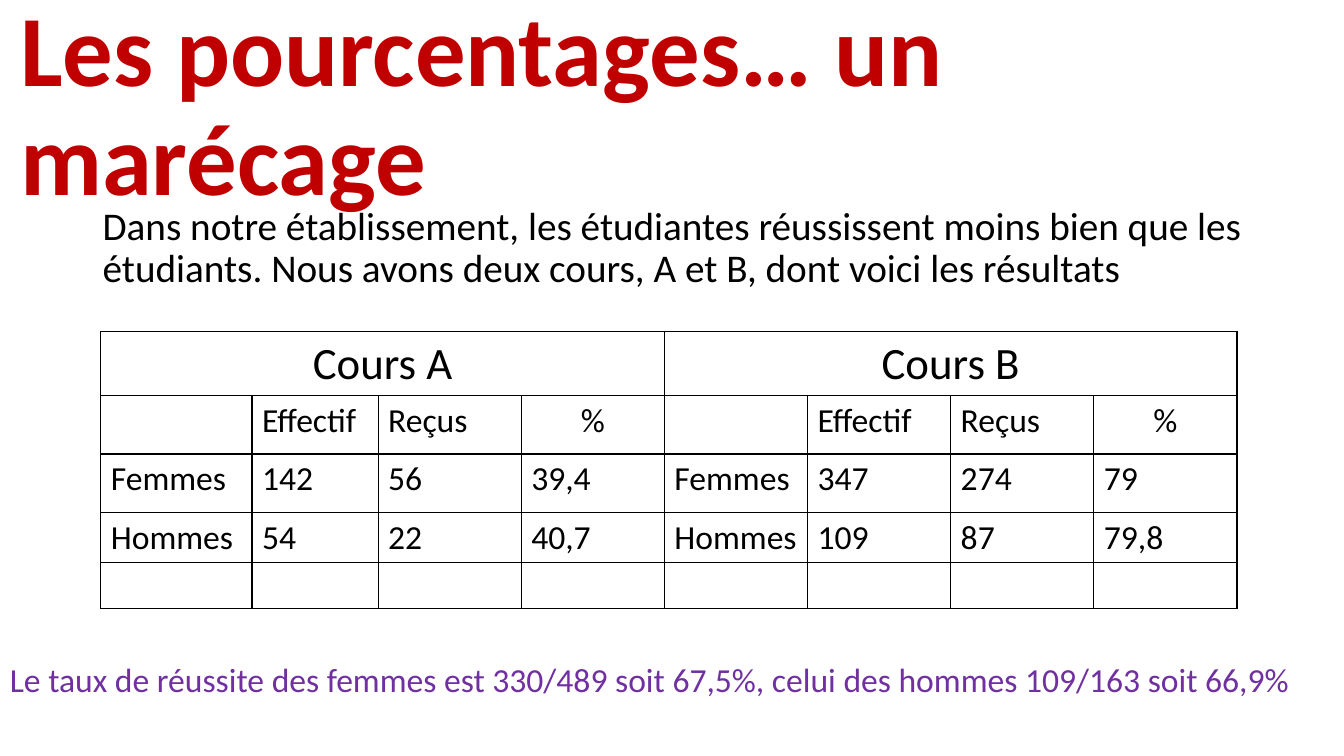
from dataclasses import dataclass

from lxml.etree import SubElement
from pptx import Presentation
from pptx.dml.color import RGBColor
from pptx.enum.text import MSO_ANCHOR as ANCHOR, MSO_AUTO_SIZE as AUTO, PP_ALIGN as ALIGN
from pptx.oxml.ns import qn
from pptx.util import Pt

EMU_PER_PX = 9144  # 100 px to the inch
FONT = "Calibri"
COLORS = {"title": "C00000", "text": "000000", "result": "7030A0"}


@dataclass(frozen=True)
class Box:
    left: int
    top: int
    width: int
    height: int

    def emu(self) -> tuple[int, ...]:
        return tuple(px(n) for n in (self.left, self.top, self.width, self.height))


@dataclass(frozen=True)
class Course:
    name: str
    women: tuple[str, str, str]
    men: tuple[str, str, str]

    def rows(self) -> list[tuple[str, ...]]:
        return [
            (self.name, "", "", ""),
            ("", "Effectif", "Reçus", "%"),
            ("Femmes", *self.women),
            ("Hommes", *self.men),
            ("", "", "", ""),
        ]


COURSES = [
    Course("Cours A", ("142", "56", "39,4"), ("54", "22", "40,7")),
    Course("Cours B", ("347", "274", "79"), ("109", "87", "79,8")),
]
COL_WIDTHS = [150, 125] + [142] * 6
ROW_HEIGHTS = [45, 58, 58, 45, 45]


def px(n: int) -> int:
    return n * EMU_PER_PX


def write(tf, text: str, *, size: int, color: str = "text", bold: bool = False,
          align=ALIGN.LEFT, line: float = 1.0, before: int = 0) -> None:
    p = tf.paragraphs[0]
    p.alignment, p.line_spacing, p.space_before = align, line, Pt(before)
    r = p.add_run()
    r.text = text
    f = r.font
    f.name, f.size, f.bold = FONT, Pt(size), bold
    f.color.rgb = RGBColor.from_string(COLORS[color])


def add_text(s, box: Box, text: str, **fmt) -> None:
    tf = s.shapes.add_textbox(*box.emu()).text_frame
    tf.word_wrap = True
    write(tf, text, **fmt)


def add_borders(cell) -> None:
    tc_pr = cell._tc.get_or_add_tcPr()
    for side in ("lnL", "lnR", "lnT", "lnB"):
        ln = SubElement(tc_pr, qn(f"a:{side}"), w=str(Pt(1)))
        fill = SubElement(ln, qn("a:solidFill"))
        SubElement(fill, qn("a:srgbClr"), val=COLORS["text"])


def add_results(s, box: Box) -> None:
    table = s.shapes.add_table(len(ROW_HEIGHTS), len(COL_WIDTHS), *box.emu()).table
    table.first_row = table.horz_banding = False
    for column, width in zip(table.columns, COL_WIDTHS):
        column.width = px(width)
    for row, height in zip(table.rows, ROW_HEIGHTS):
        row.height = px(height)
    for cell in table.iter_cells():
        add_borders(cell)
        cell.fill.background()

    for i, course in enumerate(COURSES):
        rows = course.rows()
        first = i * len(rows[0])
        heading = table.cell(0, first)
        heading.merge(table.cell(0, first + len(rows[0]) - 1))
        heading.vertical_anchor = ANCHOR.MIDDLE
        for y, row in enumerate(rows):
            for x, text in enumerate(row):
                if text:
                    centred = y == 0 or text == "%"
                    write(table.cell(y, first + x).text_frame, text,
                          size=32 if y == 0 else 24,
                          align=ALIGN.CENTER if centred else ALIGN.LEFT)


def main() -> None:
    prs = Presentation()
    prs.slide_width, prs.slide_height = px(1333), px(750)
    s = prs.slides.add_slide(prs.slide_layouts[5])

    title = s.shapes.title
    title.left, title.top, title.width, title.height = Box(10, 35, 1311, 145).emu()
    tf = title.text_frame
    tf.word_wrap, tf.auto_size, tf.vertical_anchor = True, AUTO.NONE, ANCHOR.MIDDLE
    write(tf, "Les pourcentages… un marécage", size=72, color="title", bold=True, line=0.9)

    add_text(s, Box(92, 200, 1150, 476),
             "Dans notre établissement, les étudiantes réussissent moins bien que les "
             "étudiants. Nous avons deux cours, A et B, dont voici les résultats",
             size=28, line=0.9, before=10)
    add_results(s, Box(100, 329, sum(COL_WIDTHS), sum(ROW_HEIGHTS)))
    add_text(s, Box(0, 649, 1333, 50),
             "Le taux de réussite des femmes est 330/489 soit 67,5%, "
             "celui des hommes 109/163 soit 66,9%",
             size=24, color="result")
    prs.save("out.pptx")


if __name__ == "__main__":
    main()
